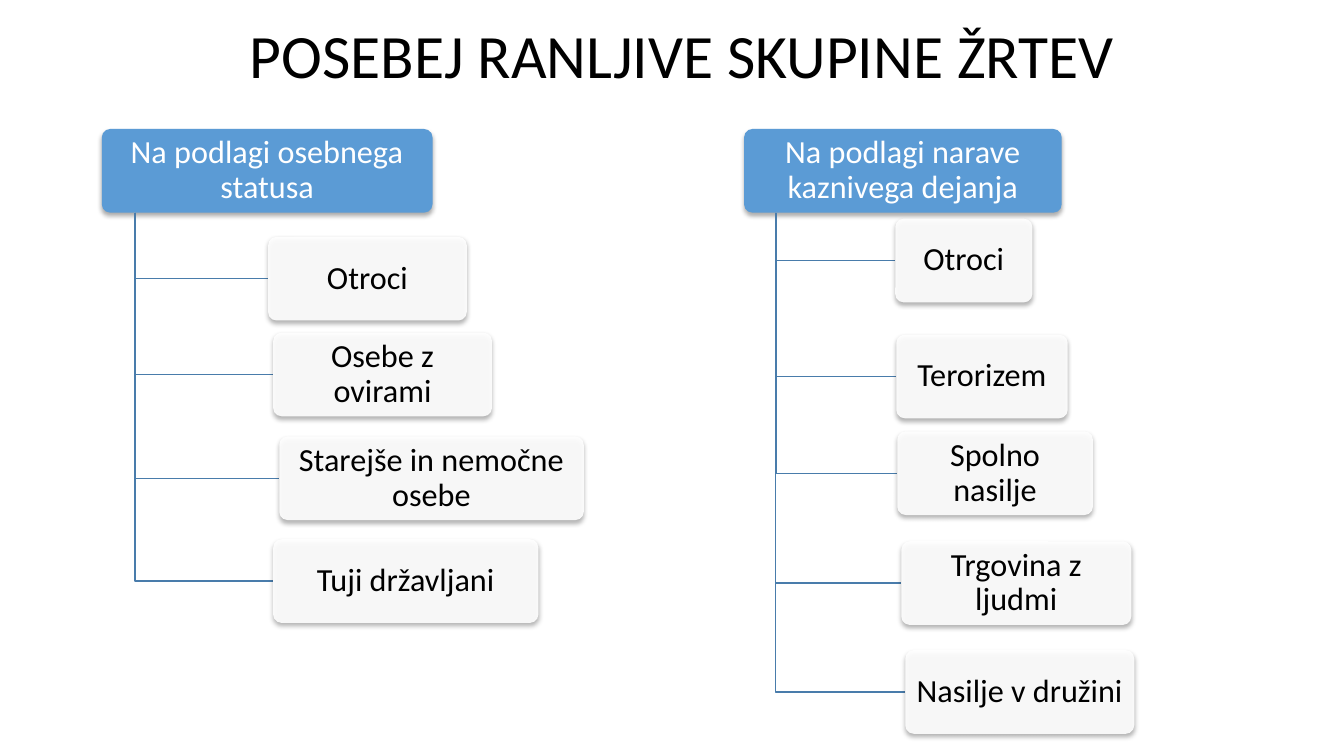
from lxml.etree import SubElement
from pptx import Presentation
from pptx.dml.color import RGBColor
from pptx.enum.shapes import MSO_SHAPE
from pptx.enum.text import MSO_ANCHOR, PP_ALIGN
from pptx.oxml.ns import qn
from pptx.util import Inches, Pt

COLOURS = {
    "header": "5B9BD5",
    "item": "FFFFFF",
    "header_text": "FFFFFF",
    "text": "000000",
    "line": "497CAB",
    "shadow": "000000",
}
FONT = "Calibri"
BOX_HEIGHT = 0.83
STEM_SHARE = 0.1

BRANCHES = [
    ("Na podlagi osebnega statusa", (1.01, 1.28, 3.28), [
        ("Otroci", 1.65, 1.07, 1.97),
        ("Osebe z ovirami", 1.7, 2.02, 2.17),
        ("Starejše in nemočne osebe", 1.76, 3.05, 3.02),
        ("Tuji državljani", 1.7, 4.07, 2.63),
    ]),
    ("Na podlagi narave kaznivega dejanja", (7.38, 1.28, 3.15), [
        ("Otroci", 1.5, 0.89, 1.36),
        ("Terorizem", 1.51, 2.04, 1.7),
        ("Spolno nasilje", 1.52, 3.0, 1.94),
        ("Trgovina z ljudmi", 1.56, 4.09, 2.28),
        ("Nasilje v družini", 1.6, 5.17, 2.27),
    ]),
]


def colour(name):
    """Return the named palette colour."""
    return RGBColor.from_string(COLOURS[name])


def write_text(shape, text, size, text_colour, margins):
    """Put one centred paragraph into a shape."""
    frame = shape.text_frame
    frame.word_wrap = True
    frame.vertical_anchor = MSO_ANCHOR.MIDDLE
    frame.margin_left = frame.margin_right = Inches(margins[0])
    frame.margin_top = frame.margin_bottom = Inches(margins[1])
    para = frame.paragraphs[0]
    para.text = text
    para.alignment = PP_ALIGN.CENTER
    para.line_spacing = 0.9
    para.font.name = FONT
    para.font.size = Pt(size)
    para.font.color.rgb = colour(text_colour)


def set_alpha(colour_element, percent):
    """Make a colour element partly transparent."""
    SubElement(colour_element, qn("a:alpha"), val=str(percent * 1000))


def add_shadow(shape):
    """Give a shape a soft shadow falling straight down."""
    shape.shadow.inherit = False
    effects = shape._element.spPr.find(qn("a:effectLst"))
    shadow = SubElement(effects, qn("a:outerShdw"), blurRad=str(Pt(3.5)),
                        dist=str(Pt(2.2)), dir="5400000",
                        algn="ctr", rotWithShape="0")
    tint = SubElement(shadow, qn("a:srgbClr"), val=COLOURS["shadow"])
    set_alpha(tint, 32)


def add_box(group, text, left, top, width, fill, text_colour, opacity=100):
    """Add a rounded box with its label."""
    box = group.shapes.add_shape(
        MSO_SHAPE.ROUNDED_RECTANGLE, Inches(left), Inches(top),
        Inches(width), Inches(BOX_HEIGHT))
    box.adjustments[0] = 0.1
    box.fill.solid()
    box.fill.fore_color.rgb = colour(fill)
    if opacity < 100:
        set_alpha(box._element.spPr.find(qn("a:solidFill"))[0], opacity)
    box.line.fill.background()
    add_shadow(box)
    write_text(box, text, 23, text_colour, (0.07, 0.05))


def add_elbow(group, left, top, right, bottom):
    """Draw a line down and then right."""
    builder = group.shapes.build_freeform(Inches(left), Inches(top))
    builder.add_line_segments(
        [(Inches(left), Inches(bottom)), (Inches(right), Inches(bottom))],
        close=False)
    elbow = builder.convert_to_shape()
    elbow.fill.background()
    elbow.line.color.rgb = colour("line")
    elbow.line.width = Pt(1)
    elbow.shadow.inherit = False


def add_branch(page, heading, left, top, width, items):
    """Add a heading box with the items hanging from its stem."""
    group = page.shapes.add_group_shape()
    add_box(group, heading, left, top, width, "header", "header_text")
    stem = left + width * STEM_SHARE
    for label, across, down, item_width in items:
        item_left, item_top = left + across, top + down
        add_elbow(group, stem, top + BOX_HEIGHT,
                  item_left, item_top + BOX_HEIGHT / 2)
        add_box(group, label, item_left, item_top, item_width,
                "item", "text", opacity=90)


def add_title(page, text, left, top, width, height):
    """Add the slide title."""
    box = page.shapes.add_textbox(
        Inches(left), Inches(top), Inches(width), Inches(height))
    write_text(box, text, 44, "text", (0.1, 0.05))


def main():
    """Build the slide and save the deck."""
    deck = Presentation()
    deck.slide_width, deck.slide_height = Inches(13.33), Inches(7.5)
    page = deck.slides.add_slide(deck.slide_layouts[6])
    add_title(page, "POSEBEJ RANLJIVE SKUPINE ŽRTEV", 1.02, 0.07, 11.5, 1.03)
    for heading, (left, top, width), items in BRANCHES:
        add_branch(page, heading, left, top, width, items)
    deck.save("out.pptx")


if __name__ == "__main__":
    main()
